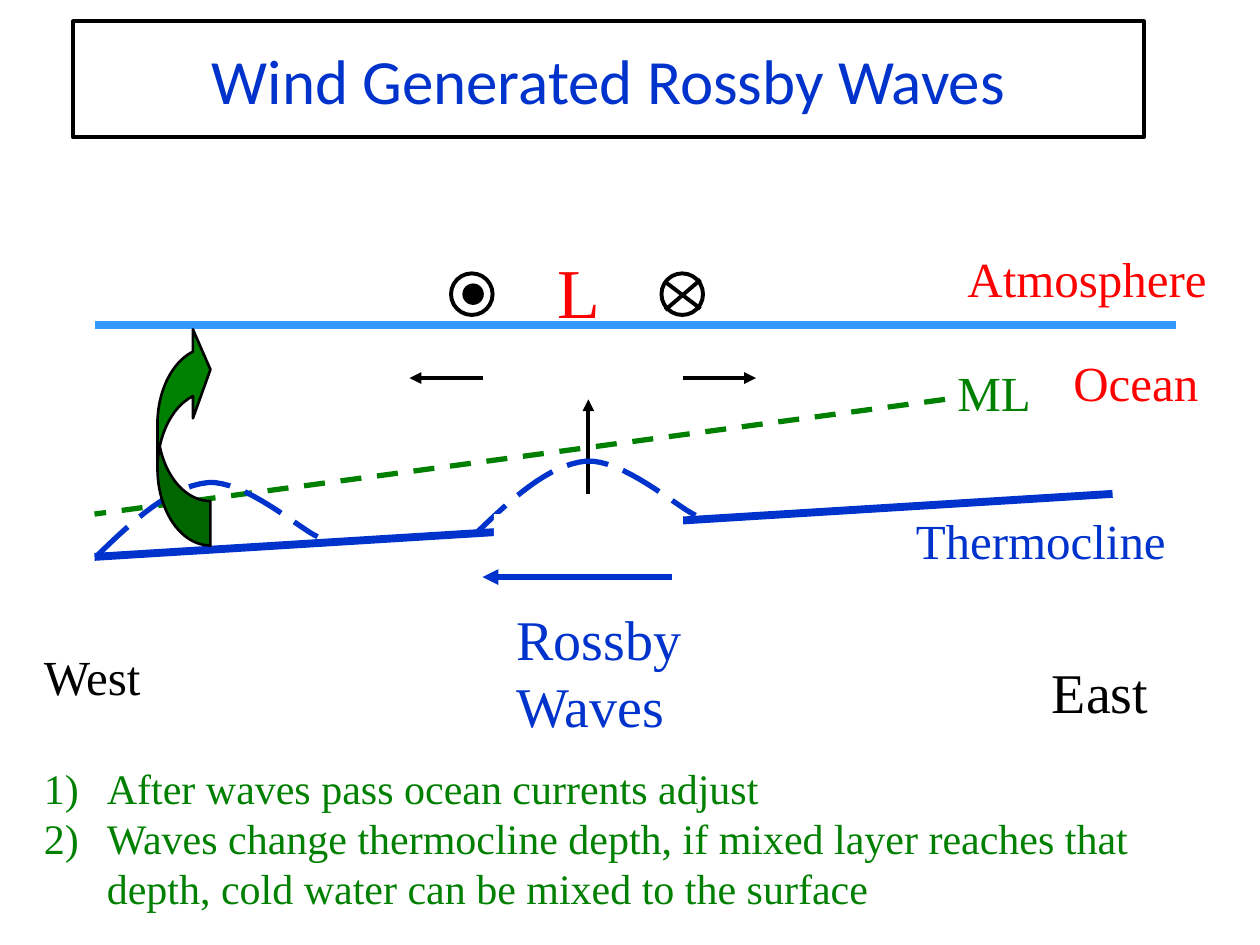
from lxml import etree
from pptx import Presentation
from pptx import util as u
from pptx.dml.color import RGBColor
from pptx.enum import dml, shapes, text
from pptx.oxml import ns

COLORS = {
    "black": "000000", "white": "FFFFFF", "red": "FF0000",
    "green": "008000", "blue": "0033CC", "surface": "3399FF",
}
SERIF = "Times New Roman"

presentation = Presentation()
presentation.slide_width, presentation.slide_height = u.Inches(10), u.Inches(7.5)
slide = presentation.slides.add_slide(presentation.slide_layouts[6])


def write(frame, lines, size, color, font=SERIF, wrap=False, align=None, numbered=False):
    """Fill a text frame with one formatted paragraph per line."""
    frame.word_wrap = wrap
    for index, line in enumerate(lines):
        paragraph = frame.paragraphs[0] if index == 0 else frame.add_paragraph()
        paragraph.alignment = align
        run = paragraph.add_run()
        run.text = line
        run.font.size = u.Pt(size)
        run.font.name = font
        run.font.color.rgb = RGBColor.from_string(COLORS[color])
        if numbered:
            properties = paragraph._p.get_or_add_pPr()
            properties.set("marL", str(u.Inches(0.5)))
            properties.set("indent", str(u.Inches(-0.5)))
            etree.SubElement(properties, ns.qn("a:buAutoNum"), type="arabicParenR")


def style(shape, line=None, width=2.25, fill=None, dash=None, arrow=False):
    """Set outline and fill; connectors have no fill of their own."""
    if isinstance(line, str):
        shape.line.color.rgb = RGBColor.from_string(COLORS[line])
        shape.line.width = u.Pt(width)
        if dash:
            shape.line.dash_style = dash
    else:
        shape.line.fill.background()
    if arrow:
        etree.SubElement(shape.line._get_or_add_ln(), ns.qn("a:tailEnd"), type="triangle")
    if shape.shape_type == shapes.MSO_SHAPE_TYPE.LINE:
        etree.SubElement(shape._element.spPr, ns.qn("a:effectLst"))
        return
    shape.shadow.inherit = False
    if fill:
        shape.fill.solid()
        shape.fill.fore_color.rgb = RGBColor.from_string(COLORS[fill])
    else:
        shape.fill.background()


# Title
title = slide.shapes.add_shape(
    shapes.MSO_SHAPE.RECTANGLE, u.Inches(0.58), u.Inches(0.17), u.Inches(8.5), u.Inches(0.92))
style(title, "black")
title.text_frame.vertical_anchor = text.MSO_ANCHOR.MIDDLE
write(title.text_frame, ["Wind Generated Rossby Waves"], 36, "blue", "Calibri", True,
      text.PP_ALIGN.CENTER)

# Sea surface, mixed layer, thermocline, wind symbol cross, currents
dash = dml.MSO_LINE.DASH
for x1, y1, x2, y2, color, width, dash_style, arrow in [
    (0.75, 2.58, 9.33, 2.58, "surface", 4.5, None, False),
    (7.5, 3.17, 0.75, 4.08, "green", 3, dash, False),
    (0.75, 4.42, 8.83, 3.92, "blue", 4.5, None, False),
    (5.27, 2.23, 5.56, 2.45, "black", 2.25, None, False),
    (5.56, 2.22, 5.28, 2.46, "black", 2.25, None, False),
    (5.42, 3, 6, 3, "black", 2.25, None, True),
    (3.83, 3, 3.25, 3, "black", 2.25, None, True),
    (4.67, 3.92, 4.67, 3.17, "black", 2.25, None, True),
    (5.33, 4.58, 3.83, 4.58, "blue", 3, None, True),
]:
    connector = slide.shapes.add_connector(
        shapes.MSO_CONNECTOR.STRAIGHT,
        u.Inches(x1), u.Inches(y1), u.Inches(x2), u.Inches(y2))
    style(connector, color, width, dash=dash_style, arrow=arrow)

# Wind symbols: into the page (right), out of the page (left)
for left, top, size, line, fill in [
    (5.25, 2.17, 0.33, "black", None),
    (3.58, 2.17, 0.33, "black", None),
    (3.67, 2.25, 0.17, None, "black"),
]:
    circle = slide.shapes.add_shape(
        shapes.MSO_SHAPE.OVAL, u.Inches(left), u.Inches(top), u.Inches(size), u.Inches(size))
    style(circle, line, fill=fill)

# Rossby waves: two joined Bezier curves, the same shape at each start point
WAVE = [
    [(0, 0), (0.29, -0.28), (0.58, -0.55), (0.88, -0.58)],
    [(0.88, -0.58), (1.17, -0.6), (1.6, -0.22), (1.75, -0.15)],
]
STEPS = 16
for start_x, start_y in [(3.77, 4.24), (0.77, 4.41)]:
    points = []
    for curve in WAVE:
        for step in range(1, STEPS + 1):
            t = step / STEPS
            weights = [(1 - t) ** 3, 3 * t * (1 - t) ** 2, 3 * t * t * (1 - t), t ** 3]
            x, y = (sum(w * p[axis] for w, p in zip(weights, curve)) for axis in (0, 1))
            points.append((u.Inches(start_x + x), u.Inches(start_y + y)))
    builder = slide.shapes.build_freeform(u.Inches(start_x), u.Inches(start_y))
    builder.add_line_segments(points, close=False)
    style(builder.convert_to_shape(), "blue", 3, dash=dml.MSO_LINE.LONG_DASH)

# Gap in the thermocline under the middle wave
gap = slide.shapes.add_shape(
    shapes.MSO_SHAPE.RECTANGLE, u.Inches(3.92), u.Inches(4.08), u.Inches(1.5), u.Inches(0.25))
style(gap, fill="white")

# Upward mixing arrow
mixing = slide.shapes.add_shape(
    shapes.MSO_SHAPE.CURVED_RIGHT_ARROW,
    u.Inches(1.25), u.Inches(2.58), u.Inches(0.42), u.Inches(1.75))
for index, value in enumerate([0.84, 1.68, 0.33]):
    mixing.adjustments[index] = value
mixing._element.spPr.find(ns.qn("a:xfrm")).set("flipV", "1")
style(mixing, "black", 1.5, "green")

# Labels
for left, top, width, height, lines, size, color in [
    (0.25, 5.08, 1, 0.57, ["West"], 28, "black"),
    (8.25, 5.17, 0.97, 0.63, ["East"], 32, "black"),
    (7.58, 1.92, 2.1, 0.57, ["Atmosphere"], 28, "red"),
    (8.42, 2.75, 1.19, 0.57, ["Ocean"], 28, "red"),
    (7.17, 4, 2.19, 0.57, ["Thermocline"], 28, "blue"),
    (7.5, 2.83, 0.78, 0.57, ["ML"], 28, "green"),
    (4.33, 1.92, 0.54, 0.77, ["L"], 40, "red"),
    (4, 4.75, 1.62, 1.17, ["Rossby", "Waves"], 32, "blue"),
]:
    label = slide.shapes.add_textbox(
        u.Inches(left), u.Inches(top), u.Inches(width), u.Inches(height))
    write(label.text_frame, lines, size, color, wrap=len(lines) > 1)

# Numbered notes
notes = slide.shapes.add_textbox(u.Inches(0.25), u.Inches(6), u.Inches(9.33), u.Inches(1.3))
write(notes.text_frame, [
    "After waves pass ocean currents adjust",
    "Waves change thermocline depth, if mixed layer reaches that depth, "
    "cold water can be mixed to the surface",
], 24, "green", wrap=True, numbered=True)

presentation.save("out.pptx")
